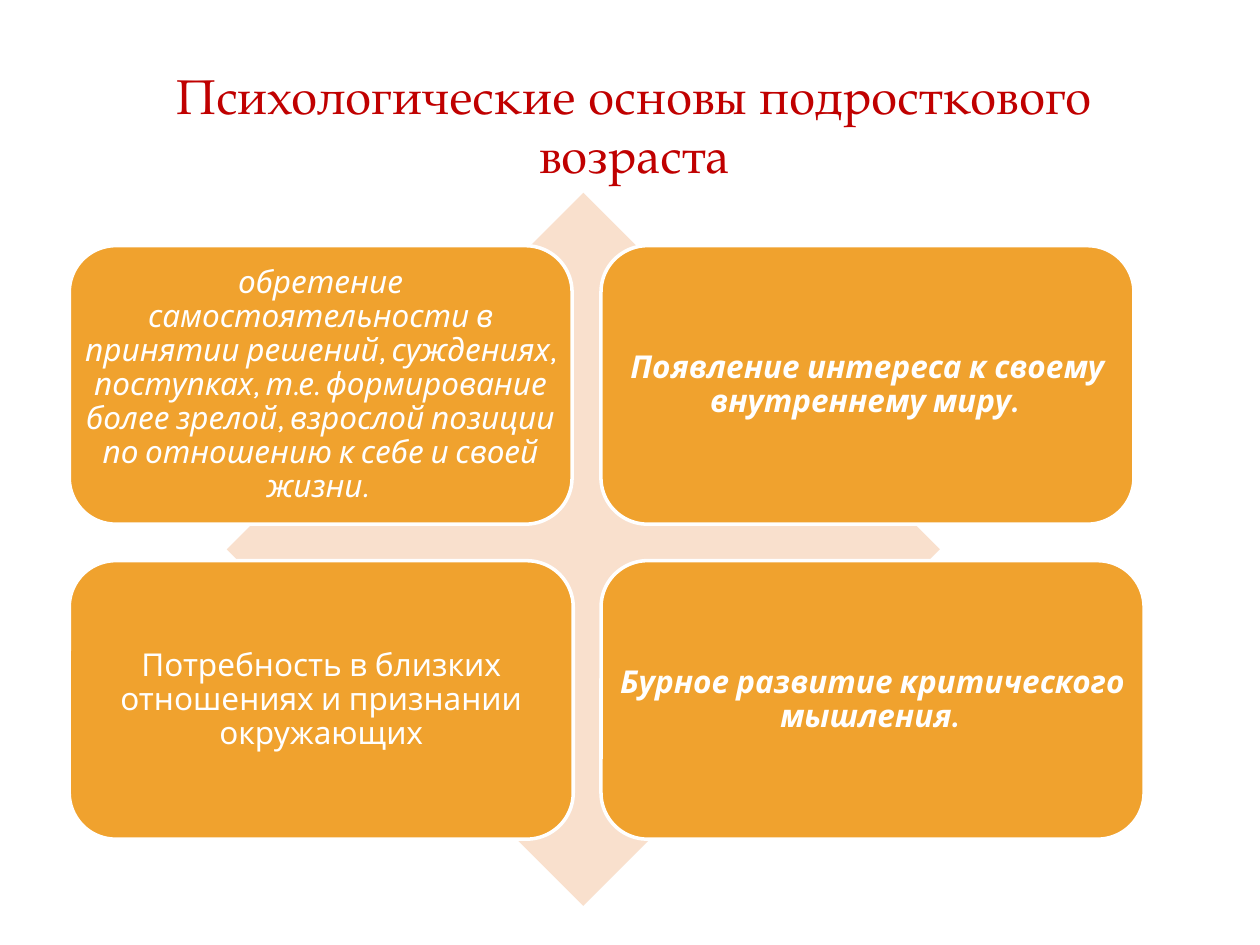
from dataclasses import dataclass
from pptx import Presentation
from pptx.dml.color import RGBColor
from pptx.enum.shapes import MSO_SHAPE
from pptx.enum.text import MSO_ANCHOR, PP_ALIGN
from pptx.util import Inches, Pt


@dataclass(frozen=True)
class Theme:
    red: str = "C00000"
    peach: str = "F9E0CD"
    gold: str = "F0A22E"
    white: str = "FFFFFF"
    serif: str = "TeX Gyre Pagella"
    sans: str = "Karla"
    head: int = 28
    body: int = 18


TITLE = "Психологические основы подросткового возраста"
CARDS = [
    [("обретение самостоятельности в принятии решений, суждениях, поступках, "
      "т.е. формирование более зрелой, взрослой позиции по отношению к себе "
      "и своей жизни. ", 3.99, False, True),
     ("Появление интереса к своему внутреннему миру. ", 4.23, True, True)],
    [("Потребность в близких отношениях и признании окружающих",
      4, False, False),
     ("Бурное развитие критического мышления. ", 4.31, True, True)],
]
WIDE, HIGH = 10, 7.5
LEFTS = (0.55, 4.77)
TOP, TALL, GAP = 1.95, 2.21, 0.29
SIDE = 5.66

theme = Theme()


def color(code):
    return RGBColor.from_string(code)


def place(shape, *box):
    shape.left, shape.top, shape.width, shape.height = map(Inches, box)


def write(shape, text, font, size, ink, anchor, bold=False, slant=False):
    frame = shape.text_frame
    frame.text = text
    frame.word_wrap = True
    frame.vertical_anchor = anchor
    par = frame.paragraphs[0]
    par.alignment = PP_ALIGN.CENTER
    face = par.runs[0].font
    face.name, face.size = font, Pt(size)
    face.bold, face.italic = bold, slant
    face.color.rgb = color(ink)
    return frame


def draw(slide, kind, box, fill):
    shape = slide.shapes.add_shape(kind, *map(Inches, box))
    shape.shadow.inherit = False
    shape.fill.solid()
    shape.fill.fore_color.rgb = color(fill)
    shape.line.fill.background()
    return shape


def card(slide, box, text, bold, slant):
    shape = draw(slide, MSO_SHAPE.ROUNDED_RECTANGLE, box, theme.gold)
    shape.line.color.rgb = color(theme.white)
    shape.line.width = Pt(2)
    frame = write(shape, text, theme.sans, theme.body, theme.white,
                  MSO_ANCHOR.MIDDLE, bold, slant)
    frame.margin_left = frame.margin_right = 0
    frame.margin_top = frame.margin_bottom = 0
    frame.paragraphs[0].line_spacing = 0.9


def main():
    deck = Presentation()
    deck.slide_width, deck.slide_height = Inches(WIDE), Inches(HIGH)
    slide = deck.slides.add_slide(deck.slide_layouts[5])
    title = slide.shapes.title
    place(title, 0.62, 0.47, 8.83, 1.04)
    write(title, TITLE, theme.serif, theme.head, theme.red, MSO_ANCHOR.TOP)
    draw(slide, MSO_SHAPE.DIAMOND, (1.8, 1.53, SIDE, SIDE), theme.peach)
    for row, cards in enumerate(CARDS):
        top = TOP + row * (TALL + GAP)
        for left, (text, width, bold, slant) in zip(LEFTS, cards):
            card(slide, (left, top, width, TALL), text, bold, slant)
    deck.save("out.pptx")


if __name__ == "__main__":
    main()
